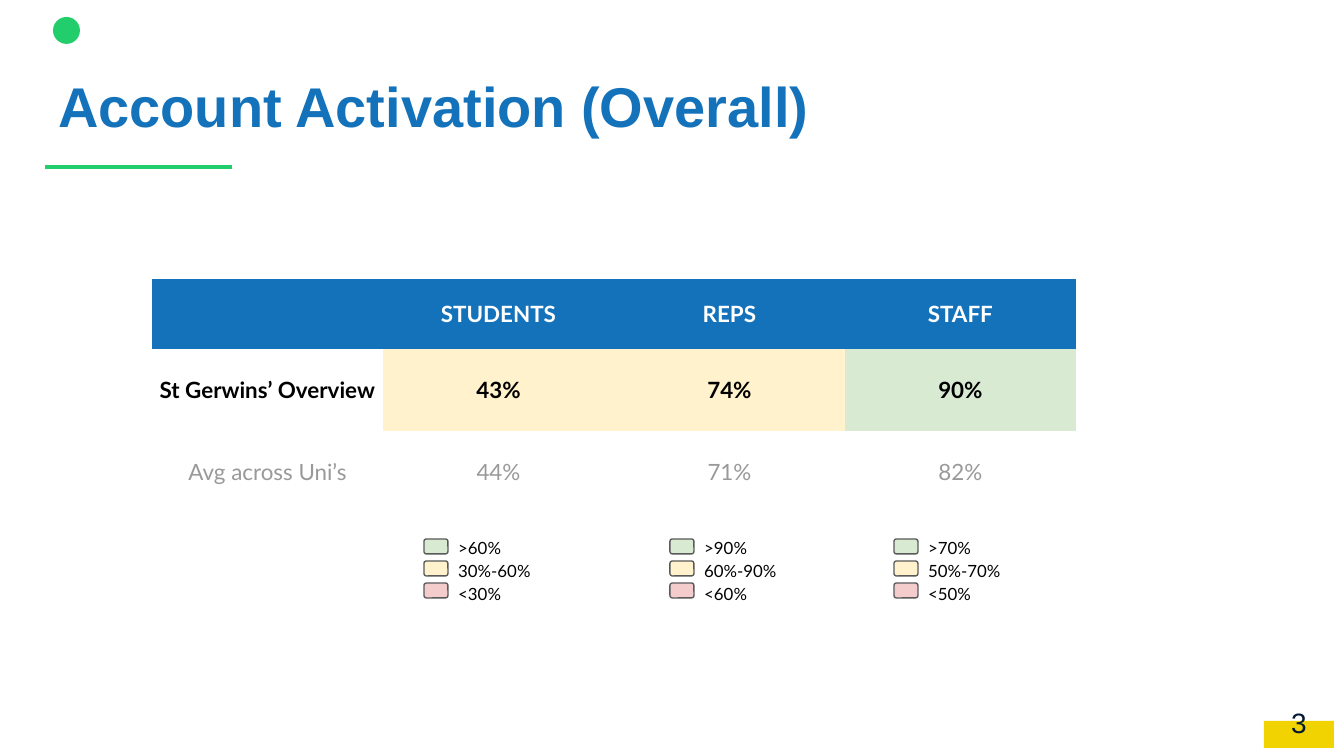
"""Build the account activation slide: a rate table with threshold legends."""
from dataclasses import dataclass

from lxml import etree
from pptx import Presentation, util as u
from pptx.dml.color import RGBColor
from pptx.enum import shapes, text
from pptx.oxml.ns import qn

PX = 914400 / 134.4
NO_GRID_STYLE = "{2D5ABB26-0587-4C30-8999-92F81FD0307C}"


@dataclass(frozen=True)
class Theme:
    blue: str = "1472BB"
    accent: str = "22CE6B"
    yellow: str = "F1D302"
    navy: str = "051934"
    white: str = "FFFFFF"
    black: str = "000000"
    muted: str = "999999"
    outline: str = "595959"
    good: str = "D9EAD3"
    fair: str = "FFF2CC"
    poor: str = "F4CCCC"
    head_font: str = "Arial"
    body_font: str = "Lato"
    title_size: float = 30
    number_size: float = 15
    table_size: float = 12
    legend_size: float = 9


T = Theme()


@dataclass(frozen=True)
class Box:
    x: int
    y: int
    w: int
    h: int

    def emu(self) -> list[u.Emu]:
        return [px(v) for v in (self.x, self.y, self.w, self.h)]


@dataclass(frozen=True)
class Style:
    font: str
    size: float
    color: str
    bold: bool = False
    align: text.PP_ALIGN = text.PP_ALIGN.LEFT
    spacing: float = 1.0


@dataclass(frozen=True)
class Row:
    height: int
    labels: tuple[str, ...]
    fills: tuple[str | None, ...]
    color: str
    bold: bool
    margins: tuple[int, int]


@dataclass(frozen=True)
class Legend:
    x: int
    labels: tuple[str, str, str]


ROWS = (
    Row(70, ("", "STUDENTS", "REPS", "STAFF"), (T.blue,) * 4, T.white, True, (13, 13)),
    Row(82, ("St Gerwins’ Overview", "43%", "74%", "90%"),
        (None, T.fair, T.fair, T.good), T.black, True, (4, 3)),
    Row(82, ("Avg across Uni’s", "44%", "71%", "82%"), (None,) * 4, T.muted, False, (4, 3)),
)
LEGENDS = (
    Legend(424, (">60%", "30%-60%", "<30%")),
    Legend(670, (">90%", "60%-90%", "<60%")),
    Legend(894, (">70%", "50%-70%", "<50%")),
)


def px(value: int) -> u.Emu:
    return u.Emu(round(value * PX))


def rgb(color: str) -> RGBColor:
    return RGBColor.from_string(color)


def style_paragraph(p, style: Style) -> None:
    p.alignment = style.align
    p.line_spacing = style.spacing
    p.font.name = style.font
    p.font.size = u.Pt(style.size)
    p.font.bold = style.bold
    p.font.color.rgb = rgb(style.color)


def add_text(s, box: Box, lines: tuple[str, ...], style: Style) -> None:
    tf = s.shapes.add_textbox(*box.emu()).text_frame
    tf.word_wrap = True
    tf.margin_left = tf.margin_right = tf.margin_top = tf.margin_bottom = u.Inches(0.1)
    tf.text = "\n".join(lines)
    for p in tf.paragraphs:
        style_paragraph(p, style)


def add_shape(s, kind: shapes.MSO_SHAPE, box: Box, fill: str, line: str | None = None) -> None:
    sp = s.shapes.add_shape(kind, *box.emu())
    sp.shadow.inherit = False
    sp.fill.solid()
    sp.fill.fore_color.rgb = rgb(fill)
    if line:
        sp.line.color.rgb = rgb(line)
        sp.line.width = u.Pt(0.75)
    else:
        sp.line.fill.background()


def add_rule(s, x1: int, x2: int, y: int) -> None:
    rule = s.shapes.add_connector(shapes.MSO_CONNECTOR.STRAIGHT, px(x1), px(y), px(x2), px(y))
    rule.line.color.rgb = rgb(T.accent)
    rule.line.width = u.Pt(2.25)
    etree.SubElement(rule._element.spPr, qn("a:effectLst"))


def add_rates(s, x: int, y: int, col_width: int, rows: tuple[Row, ...]) -> None:
    cols = len(rows[0].labels)
    box = Box(x, y, col_width * cols, sum(row.height for row in rows))
    table = s.shapes.add_table(len(rows), cols, *box.emu()).table
    table.first_row = table.horz_banding = False
    table._tbl.tblPr.find(qn("a:tableStyleId")).text = NO_GRID_STYLE
    for col in table.columns:
        col.width = px(col_width)
    for r, row in enumerate(rows):
        table.rows[r].height = px(row.height)
        style = Style(T.body_font, T.table_size, row.color, row.bold, text.PP_ALIGN.CENTER)
        for c, (label, fill) in enumerate(zip(row.labels, row.fills)):
            cell = table.cell(r, c)
            cell.vertical_anchor = text.MSO_ANCHOR.MIDDLE
            cell.margin_left = cell.margin_right = px(row.margins[0])
            cell.margin_top = cell.margin_bottom = px(row.margins[1])
            if fill:
                cell.fill.solid()
                cell.fill.fore_color.rgb = rgb(fill)
            else:
                cell.fill.background()
            cell.text = label
            style_paragraph(cell.text_frame.paragraphs[0], style)


def add_legend(s, legend: Legend) -> None:
    style = Style(T.body_font, T.legend_size, T.black, spacing=1.15)
    add_text(s, Box(legend.x + 21, 521, 155, 85), legend.labels, style)
    for i, fill in enumerate((T.good, T.fair, T.poor)):
        swatch = Box(legend.x, 539 + 22 * i, 24, 15)
        add_shape(s, shapes.MSO_SHAPE.ROUNDED_RECTANGLE, swatch, fill, T.outline)


def main() -> None:
    prs = Presentation()
    prs.slide_width, prs.slide_height = px(1344), px(756)
    s = prs.slides.add_slide(prs.slide_layouts[6])
    add_rule(s, 45, 232, 167)
    add_shape(s, shapes.MSO_SHAPE.OVAL, Box(53, 17, 27, 27), T.accent)
    add_shape(s, shapes.MSO_SHAPE.RECTANGLE, Box(1264, 721, 70, 27), T.yellow)
    add_text(s, Box(45, 58, 988, 84), ("Account Activation (Overall)",),
             Style(T.head_font, T.title_size, T.blue, True))
    add_text(s, Box(1261, 692, 76, 63), ("3",),
             Style(T.head_font, T.number_size, T.navy, align=text.PP_ALIGN.CENTER))
    add_rates(s, 152, 279, 231, ROWS)
    for legend in LEGENDS:
        add_legend(s, legend)
    prs.save("out.pptx")


if __name__ == "__main__":
    main()
